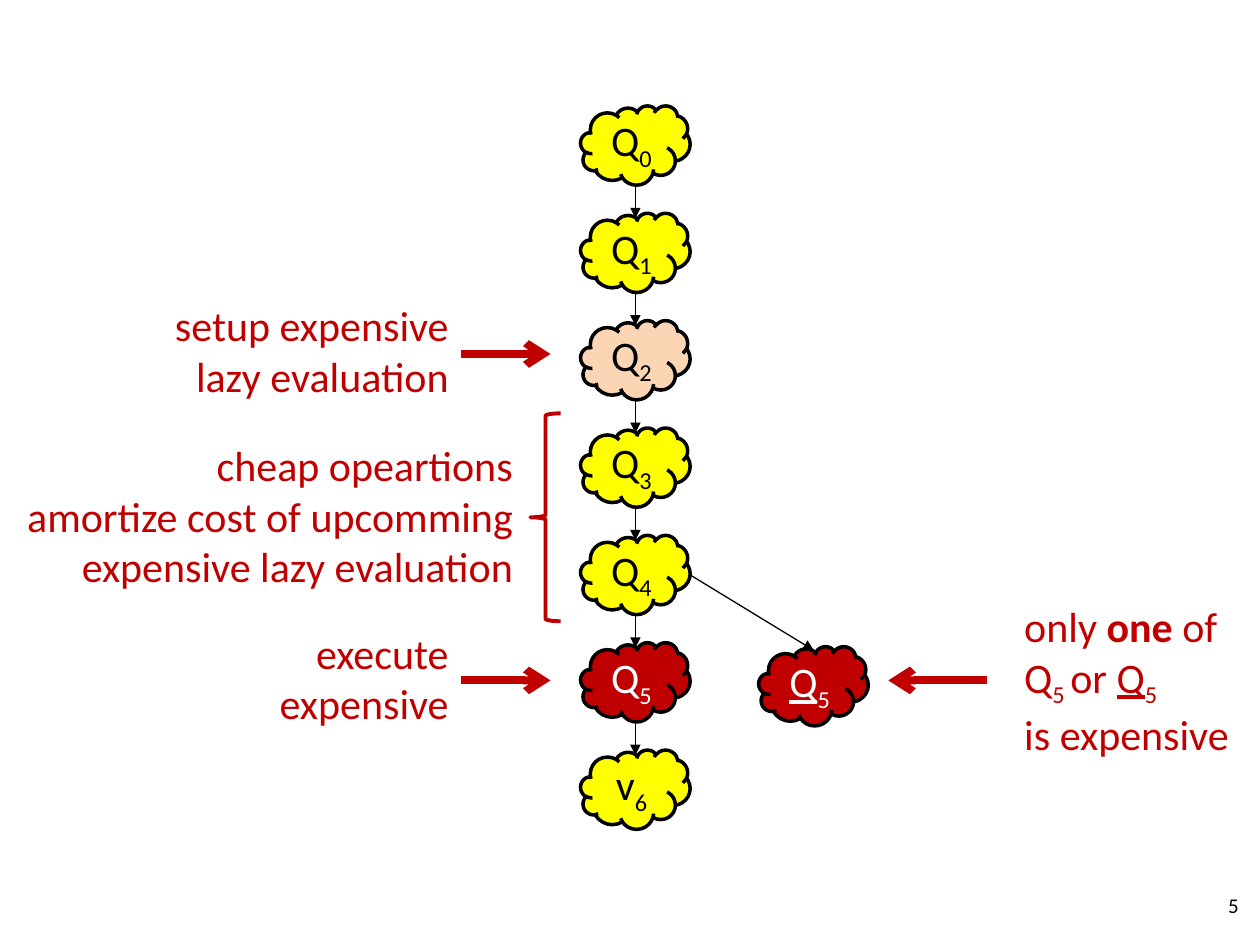
"""Build the slide on query states and the cost of lazy evaluation."""
from dataclasses import dataclass

from lxml.etree import SubElement
from pptx import Presentation
from pptx.dml.color import RGBColor
from pptx.enum.shapes import MSO_CONNECTOR, MSO_SHAPE
from pptx.enum.text import MSO_ANCHOR, PP_ALIGN
from pptx.oxml.ns import qn
from pptx.slide import Slide
from pptx.util import Pt

BLACK = RGBColor(0x00, 0x00, 0x00)
WHITE = RGBColor(0xFF, 0xFF, 0xFF)
YELLOW = RGBColor(0xFF, 0xFF, 0x00)
PEACH = RGBColor(0xFC, 0xD5, 0xB5)
RED = RGBColor(0xC0, 0x00, 0x00)
FONT = "Calibri"

WIDE, HIGH = 62.6, 45.3
LEFT, TOP, STEP = 331.8, 60.4, 61.35
MID = LEFT + WIDE / 2
DIP = 3


@dataclass(frozen=True)
class Part:
    """A run of text, with its own style; a newline is a line break."""
    text: str
    sub: bool = False
    bold: bool = False
    under: bool = False


@dataclass(frozen=True)
class State:
    """A cloud that names one state."""
    name: str
    index: str
    fill: RGBColor = YELLOW
    ink: RGBColor = BLACK
    under: bool = False


@dataclass(frozen=True)
class Note:
    """A block of red text beside the chain."""
    box: tuple[float, float, float, float]
    paras: list[list[Part]]
    align: PP_ALIGN = PP_ALIGN.RIGHT


@dataclass(frozen=True)
class Arrow:
    """A straight arrow from start to end."""
    start: tuple[float, float]
    end: tuple[float, float]
    color: RGBColor = BLACK
    width: float = 0.75
    head: str = "triangle"


STATES = [
    State("Q", "0"),
    State("Q", "1"),
    State("Q", "2", PEACH),
    State("Q", "3"),
    State("Q", "4"),
    State("Q", "5", RED, WHITE),
    State("v", "6"),
]
BRANCH = State("Q", "5", RED, WHITE, under=True)

NOTES = [
    Note((0, 167.8, 263.5, 65.5), [[Part("setup expensive\nlazy evaluation")]]),
    Note((87.8, 355, 175.7, 65.5), [[Part("execute expensive")]]),
    Note((0, 247.7, 300.2, 94.3), [
        [Part("cheap opeartions")],
        [Part("amortize cost of upcomming expensive lazy evaluation")],
    ]),
    Note((578.2, 339.8, 156.2, 94.3), [[
        Part("only "), Part("one", bold=True), Part(" of \nQ"),
        Part("5 ", sub=True), Part("or "), Part("Q", under=True),
        Part("5 \n", sub=True), Part("is expensive"),
    ]], PP_ALIGN.LEFT),
]

LINKS = [
    Arrow((MID, TOP + i * STEP + HIGH), (MID, TOP + (i + 1) * STEP + DIP))
    for i in range(len(STATES) - 1)
] + [Arrow((394, 328.3), (465, 371.6))]

HINTS = [
    Arrow(start, end, RED, 4.5, "arrow")
    for start, end in [
        ((263.5, 202.3), (314.6, 202.3)),
        ((263.5, 388.8), (314.6, 388.8)),
        ((563.8, 388.8), (507.6, 388.8)),
    ]
]


def write(para, parts: list[Part], ink: RGBColor, size: float = 24) -> None:
    """Add the parts to a paragraph, run by run."""
    for part in parts:
        for i, line in enumerate(part.text.split("\n")):
            if i:
                para.add_line_break()
            if not line:
                continue
            run = para.add_run()
            run.text = line
            font = run.font
            font.name, font.size = FONT, Pt(size)
            font.bold, font.underline = part.bold, part.under
            font.color.rgb = ink
            if part.sub:
                run._r.get_or_add_rPr().set("baseline", "-25000")


def draw_state(slide: Slide, state: State, left: float, top: float) -> None:
    """Draw one cloud with its label."""
    cloud = slide.shapes.add_shape(
        MSO_SHAPE.CLOUD, Pt(left), Pt(top), Pt(WIDE), Pt(HIGH))
    cloud.shadow.inherit = False
    cloud.fill.solid()
    cloud.fill.fore_color.rgb = state.fill
    cloud.line.color.rgb = BLACK
    cloud.line.width = Pt(2)
    frame = cloud.text_frame
    frame.word_wrap = False
    frame.vertical_anchor = MSO_ANCHOR.MIDDLE
    para = frame.paragraphs[0]
    para.alignment = PP_ALIGN.CENTER
    label = [Part(state.name, under=state.under), Part(state.index, sub=True)]
    write(para, label, state.ink)


def draw_arrow(slide: Slide, arrow: Arrow) -> None:
    """Draw one arrow."""
    ends = [Pt(v) for v in (*arrow.start, *arrow.end)]
    line = slide.shapes.add_connector(MSO_CONNECTOR.STRAIGHT, *ends)
    line.line.color.rgb = arrow.color
    line.line.width = Pt(arrow.width)
    SubElement(line.line._get_or_add_ln(), qn("a:tailEnd"), type=arrow.head)
    SubElement(line._element.spPr, qn("a:effectLst"))


def draw_note(slide: Slide, note: Note, ink: RGBColor = RED,
              size: float = 24, anchor: MSO_ANCHOR = MSO_ANCHOR.TOP) -> None:
    """Draw one block of text."""
    box = slide.shapes.add_textbox(*[Pt(v) for v in note.box])
    frame = box.text_frame
    frame.word_wrap = True
    frame.vertical_anchor = anchor
    for i, parts in enumerate(note.paras):
        para = frame.add_paragraph() if i else frame.paragraphs[0]
        para.alignment = note.align
        write(para, parts, ink, size)


def draw_brace(slide: Slide) -> None:
    """Draw the brace that spans the cheap steps."""
    brace = slide.shapes.add_shape(
        MSO_SHAPE.LEFT_BRACE, Pt(303.1), Pt(236.2), Pt(17.3), Pt(118.8))
    brace.shadow.inherit = False
    brace.fill.background()
    brace.line.color.rgb = RED
    brace.line.width = Pt(2.25)


def main() -> None:
    """Build and save the slide."""
    deck = Presentation()
    deck.slide_width, deck.slide_height = Pt(720), Pt(540)
    slide = deck.slides.add_slide(deck.slide_layouts[6])
    for i, state in enumerate(STATES):
        draw_state(slide, state, LEFT, TOP + i * STEP)
    draw_state(slide, BRANCH, 433.6, 369.4)
    for arrow in LINKS + HINTS:
        draw_arrow(slide, arrow)
    draw_brace(slide)
    for note in NOTES:
        draw_note(slide, note)
    page = Note((547.2, 502.6, 167.8, 28.8), [[Part("5")]])
    draw_note(slide, page, BLACK, 12, MSO_ANCHOR.MIDDLE)
    deck.save("out.pptx")


if __name__ == "__main__":
    main()
